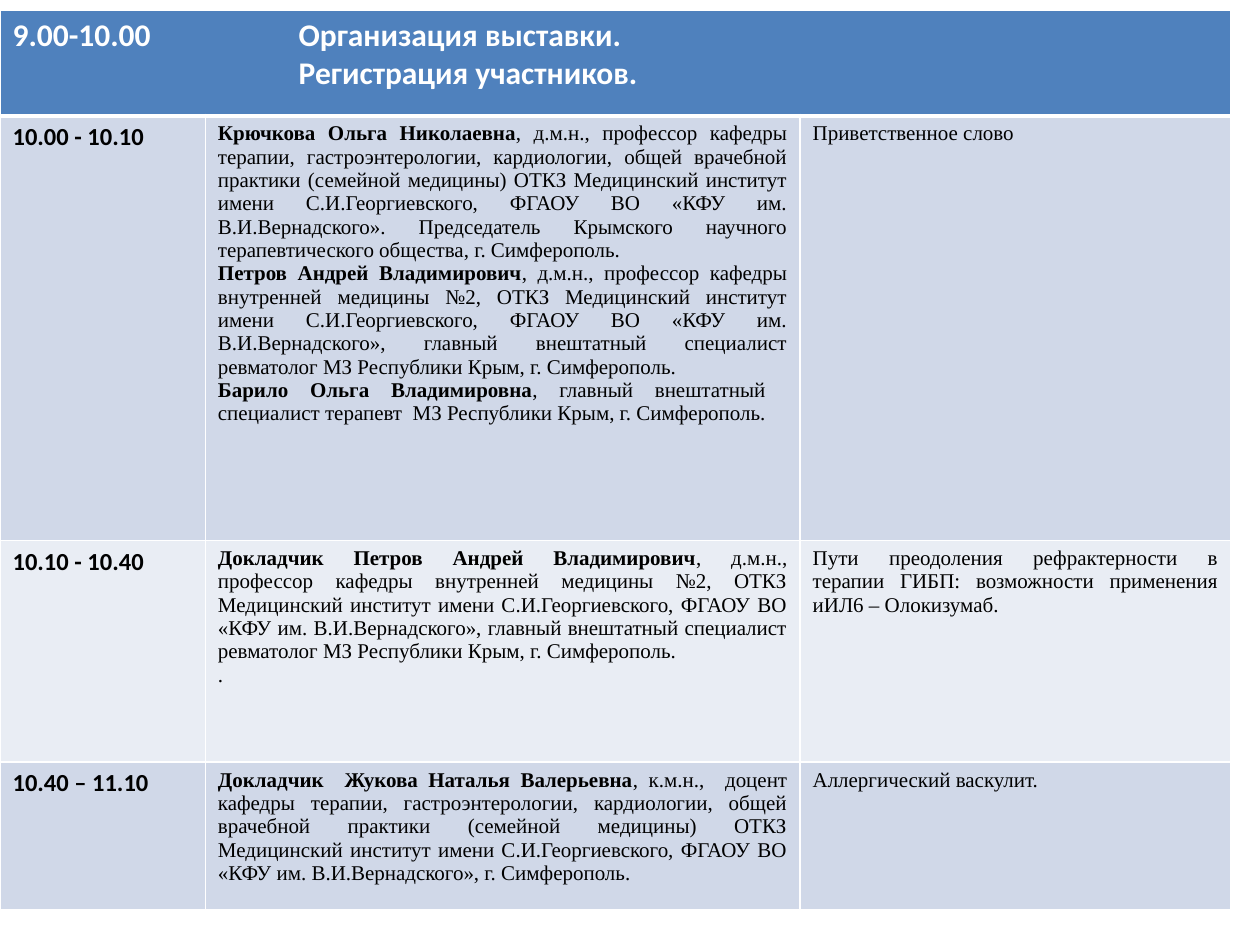
"""Build the conference programme slide with its timetable."""
from lxml import etree
from pptx import Presentation
from pptx.dml.color import RGBColor
from pptx.enum.text import PP_ALIGN
from pptx.oxml.ns import qn
from pptx.util import Inches, Pt

LEFT, JUSTIFY = PP_ALIGN.LEFT, PP_ALIGN.JUSTIFY
WHITE = RGBColor(0xFF, 0xFF, 0xFF)
BLACK = RGBColor(0, 0, 0)
HEADER_BLUE = RGBColor(0x4F, 0x81, 0xBD)
BANDS = [RGBColor(0xD0, 0xD8, 0xE8), RGBColor(0xE9, 0xED, 0xF4)]

COLUMN_WIDTHS = [1.63, 4.72, 3.42]
ROW_HEIGHTS = [0.84, 3.37, 1.76, 1.17]
EVENT_INDENT = Inches(2.27)

INSTITUTE = ("ОТКЗ Медицинский институт имени С.И.Георгиевского, "
             "ФГАОУ ВО «КФУ им. В.И.Вернадского»")
THERAPY = ("кафедры терапии, гастроэнтерологии, кардиологии, "
           "общей врачебной практики (семейной медицины) " + INSTITUTE)
PETROV_POST = (", д.м.н., профессор кафедры внутренней медицины №2, " + INSTITUTE
               + ", главный внештатный специалист ревматолог МЗ Республики Крым, "
               "г. Симферополь.")

HEADER = ["9.00-10.00\tОрганизация выставки.", "Регистрация участников."]
SESSIONS = [
    ("10.00 - 10.10",
     [("Крючкова Ольга Николаевна",
       ", д.м.н., профессор " + THERAPY + ". Председатель Крымского научного "
       "терапевтического общества, г. Симферополь."),
      ("Петров Андрей Владимирович", PETROV_POST),
      ("Барило Ольга Владимировна",
       ", главный внештатный  специалист терапевт  МЗ Республики Крым, "
       "г. Симферополь.")],
     "Приветственное слово"),
    ("10.10 - 10.40",
     [("Докладчик Петров Андрей Владимирович", PETROV_POST), ("", ".")],
     "Пути преодоления рефрактерности в терапии ГИБП: возможности применения "
     "иИЛ6 – Олокизумаб."),
    ("10.40 – 11.10",
     [("Докладчик  Жукова Наталья Валерьевна",
       ", к.м.н.,  доцент " + THERAPY + ", г. Симферополь.")],
     "Аллергический васкулит."),
]


def set_borders(cell, widths):
    """Draw white cell borders from a mapping of side to points."""
    properties = cell._tc.get_or_add_tcPr()
    for side, width in widths.items():
        line = etree.SubElement(properties, qn(f"a:ln{side}"), w=str(Pt(width)))
        fill = etree.SubElement(line, qn("a:solidFill"))
        etree.SubElement(fill, qn("a:srgbClr"), val=str(WHITE))


def style_cell(cell, color, top=1, bottom=1):
    """Give a cell its borders and fill."""
    set_borders(cell, {"L": 1, "R": 1, "T": top, "B": bottom})
    cell.fill.solid()
    cell.fill.fore_color.rgb = color


def write_cell(cell, paragraphs, font, size, color=BLACK, align=JUSTIFY):
    """Write paragraphs given as pairs of bold and plain text."""
    frame = cell.text_frame
    for index, parts in enumerate(paragraphs):
        paragraph = frame.add_paragraph() if index else frame.paragraphs[0]
        paragraph.alignment = align
        for text, bold in zip(parts, (True, False)):
            if text:
                run = paragraph.add_run()
                run.text = text
                run.font.name = font
                run.font.size = Pt(size)
                run.font.bold = bold
                run.font.color.rgb = color


def fill_header(table):
    """Fill the merged heading row and align its event lines."""
    for column in range(len(COLUMN_WIDTHS)):
        style_cell(table.cell(0, column), HEADER_BLUE, bottom=3)
    heading = table.cell(0, 0)
    heading.merge(table.cell(0, len(COLUMN_WIDTHS) - 1))
    write_cell(heading, [(line, "") for line in HEADER], "Calibri", 18, WHITE)
    opening, registration = heading.text_frame.paragraphs
    tabs = etree.SubElement(opening._p.get_or_add_pPr(), qn("a:tabLst"))
    etree.SubElement(tabs, qn("a:tab"), pos=str(EVENT_INDENT), algn="l")
    registration._p.get_or_add_pPr().set("marL", str(EVENT_INDENT))


def fill_session(table, row, time, speakers, topic):
    """Fill one row with time, speakers and topic."""
    for column in range(len(COLUMN_WIDTHS)):
        style_cell(table.cell(row, column), BANDS[(row - 1) % 2],
                   top=3 if row == 1 else 1)
    write_cell(table.cell(row, 0), [(time, "")], "Calibri", 14, align=LEFT)
    write_cell(table.cell(row, 1), speakers, "Times New Roman", 12)
    write_cell(table.cell(row, 2), [("", topic)], "Times New Roman", 12)


def add_programme(slide):
    """Add the timetable to the slide."""
    table = slide.shapes.add_table(
        len(ROW_HEIGHTS), len(COLUMN_WIDTHS), Inches(0), Inches(0.08),
        Inches(sum(COLUMN_WIDTHS)), Inches(sum(ROW_HEIGHTS))).table
    for column, width in zip(table.columns, COLUMN_WIDTHS):
        column.width = Inches(width)
    for row, height in zip(table.rows, ROW_HEIGHTS):
        row.height = Inches(height)
    fill_header(table)
    for row, session in enumerate(SESSIONS, start=1):
        fill_session(table, row, *session)


def main():
    """Create and save the presentation."""
    presentation = Presentation()
    presentation.slide_width = Inches(10)
    presentation.slide_height = Inches(7.5)
    add_programme(presentation.slides.add_slide(presentation.slide_layouts[6]))
    presentation.save("out.pptx")


if __name__ == "__main__":
    main()
